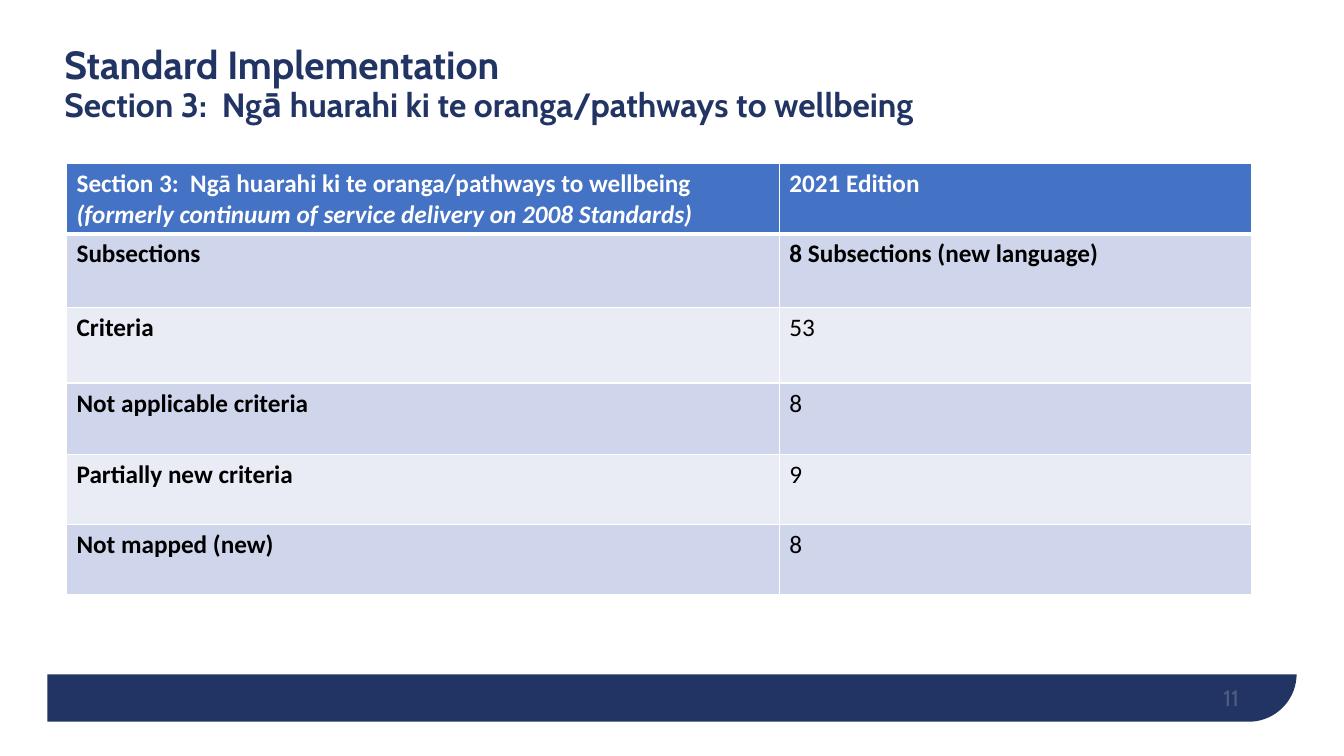
"""Build the Standard Implementation slide with its Section 3 criteria table."""
from lxml.etree import SubElement
from pptx import Presentation
from pptx.dml.color import RGBColor
from pptx.enum.shapes import MSO_SHAPE as Shape
from pptx.enum.text import MSO_ANCHOR as Anchor, PP_ALIGN as Align
from pptx.oxml.ns import qn
from pptx.util import Inches, Pt

NAVY, WHITE, BLACK = "213463", "FFFFFF", "000000"
HEADER, BAND_DARK, BAND_LIGHT = "4472C4", "CFD5EA", "E9EBF5"
SECTION = "Section 3:  Ngā huarahi ki te oranga/pathways to wellbeing"


def rgb(value):
    return RGBColor.from_string(value)


def add_span(para, text, color, **formats):
    span = para.add_run()
    span.text = text
    span.font.color.rgb = rgb(color)
    for name, value in formats.items():
        setattr(span.font, name, value)
    return span


deck = Presentation()
deck.slide_width, deck.slide_height = Inches(13.33), Inches(7.5)
page = deck.slides.add_slide(deck.slide_layouts[6])

footer = page.shapes.add_shape(
    Shape.ROUND_1_RECTANGLE, Inches(0.47), Inches(0.37), Inches(12.39), Inches(6.79))
footer.adjustments[0] = 0.07
footer.rotation = 180
footer.element.spPr.xfrm.set("flipH", "1")
cover = page.shapes.add_shape(Shape.RECTANGLE, 0, 0, deck.slide_width, Inches(6.69))
for panel, color in ((footer, NAVY), (cover, WHITE)):
    panel.shadow.inherit = False
    panel.fill.solid()
    panel.fill.fore_color.rgb = rgb(color)
    panel.line.fill.background()

number_box = page.shapes.add_textbox(Inches(9.29), Inches(6.65), Inches(3), Inches(0.4))
number_format = {"word_wrap": True, "vertical_anchor": Anchor.BOTTOM, "margin_left": 0,
                 "margin_top": 0, "margin_right": 0, "margin_bottom": 0}
for name, value in number_format.items():
    setattr(number_box.text_frame, name, value)
para = number_box.text_frame.paragraphs[0]
para.alignment = Align.RIGHT
span = add_span(para, "11", WHITE, name="Cabin", size=Pt(16))
tint = span.font.fill._xPr.find(qn("a:solidFill"))[0]
SubElement(tint, qn("a:alpha"), val="20000")

title_box = page.shapes.add_textbox(Inches(0.54), Inches(0.28), Inches(11.88), Inches(1.13))
title_box.text_frame.word_wrap = True
title_box.text_frame.vertical_anchor = Anchor.MIDDLE
para = title_box.text_frame.paragraphs[0]
para.line_spacing = 0.9
add_span(para, "Standard Implementation", NAVY, name="Cabin", size=Pt(28), bold=True)
para.add_line_break()
add_span(para, SECTION, NAVY, name="Cabin", size=Pt(24), bold=True)

rows = [
    (0.70, [SECTION, "(formerly continuum of service delivery on 2008 Standards)"],
     "2021 Edition"),
    (0.73, ["Subsections"], "8 Subsections (new language)"),
    (0.75, ["Criteria"], "53"),
    (0.71, ["Not applicable criteria"], "8"),
    (0.69, ["Partially new criteria"], "9"),
    (0.70, ["Not mapped (new)"], "8"),
]
widths = [7.07, 4.68]
table = page.shapes.add_table(
    len(rows), len(widths), Inches(0.66), Inches(1.62), Inches(sum(widths)),
    Inches(sum(row[0] for row in rows))).table
for column, width in zip(table.columns, widths):
    column.width = Inches(width)

for row_index, (height, label, value) in enumerate(rows):
    table.rows[row_index].height = Inches(height)
    is_header = row_index == 0
    fill = HEADER if is_header else (BAND_LIGHT, BAND_DARK)[row_index % 2]
    edges = {"L": 1, "R": 1, "T": 3 if row_index == 1 else 1, "B": 3 if is_header else 1}
    for column_index, lines in enumerate((label, [value])):
        cell = table.cell(row_index, column_index)
        properties = cell._tc.get_or_add_tcPr()
        for side, width in edges.items():
            edge = SubElement(properties, qn(f"a:ln{side}"), w=str(Pt(width)))
            SubElement(SubElement(edge, qn("a:solidFill")), qn("a:srgbClr"), val=WHITE)
        cell.fill.solid()
        cell.fill.fore_color.rgb = rgb(fill)
        for line_index, line in enumerate(lines):
            frame = cell.text_frame
            para = frame.add_paragraph() if line_index else frame.paragraphs[0]
            add_span(para, line, WHITE if is_header else BLACK, name="Calibri", size=Pt(18),
                     bold=column_index == 0 or row_index < 2, italic=line_index == 1)

deck.save("out.pptx")
